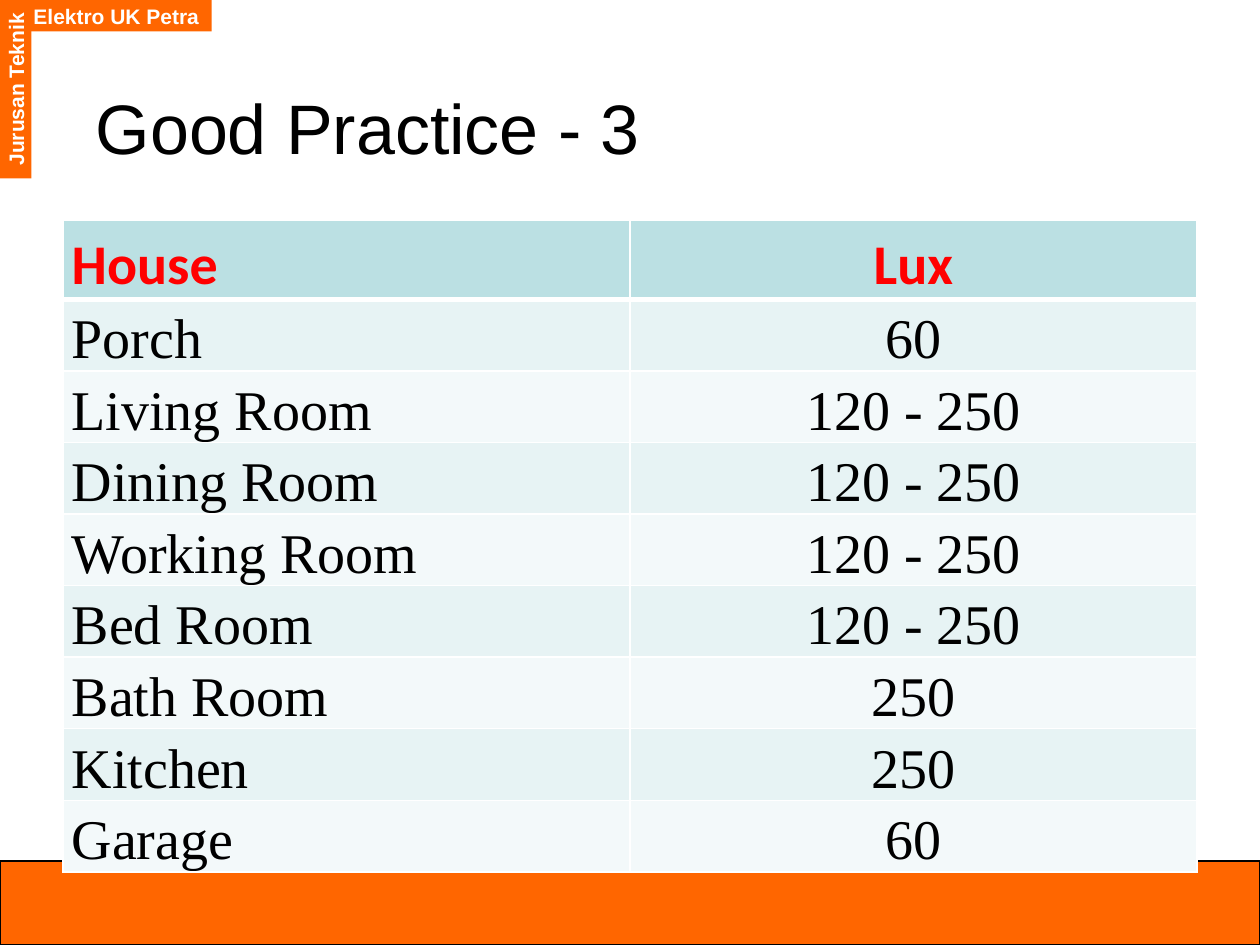
import lxml.etree
import pptx
import pptx.dml.color
import pptx.enum.shapes
import pptx.enum.text
import pptx.oxml.ns
import pptx.util

Pt = pptx.util.Pt
rgb = pptx.dml.color.RGBColor.from_string
align = pptx.enum.text.PP_ALIGN
anchor = pptx.enum.text.MSO_ANCHOR
rect = pptx.enum.shapes.MSO_SHAPE.RECTANGLE
qn = pptx.oxml.ns.qn

theme = {
    "orange": "FF6600", "white": "FFFFFF", "black": "000000", "red": "FF0000",
    "head": "BBE0E3", "bands": ("E7F3F4", "F3F9FA"),
    "label": 12, "title": 40, "cell": 32,
}


def style(font, name, size, color, bold=False):
    looks = {"name": name, "size": Pt(size), "bold": bold}
    for key, value in looks.items():
        setattr(font, key, value)
    font.color.rgb = rgb(color)


def edge(cell, side, width):
    line = lxml.etree.SubElement(
        cell._tc.get_or_add_tcPr(), qn("a:" + side), w=str(Pt(width)))
    fill = lxml.etree.SubElement(line, qn("a:solidFill"))
    lxml.etree.SubElement(fill, qn("a:srgbClr"), val=theme["white"])


deck = pptx.Presentation()
deck.slide_width, deck.slide_height = Pt(720), Pt(540)
slide = deck.slides.add_slide(deck.slide_layouts[5])
shapes = slide.shapes

# Orange footer and corner labels
bars = [
    ("", (0, 492, 720, 48), 0),
    ("Elektro UK Petra", (12, 0, 109, 18), 0),
    ("Jurusan Teknik", (-42, 42, 102, 18), 270),
]
for text, place, turn in bars:
    bar = shapes.add_shape(rect, *map(Pt, place))
    bar.shadow.inherit = False
    bar.rotation = turn
    bar.fill.solid()
    bar.fill.fore_color.rgb = rgb(theme["orange"])
    if not text:
        bar.line.color.rgb = rgb(theme["black"])
        bar.line.width = Pt(0.75)
        continue
    bar.line.fill.background()
    frame = bar.text_frame
    frame.word_wrap = False
    frame.vertical_anchor = anchor.MIDDLE
    par = frame.paragraphs[0]
    par.text = text
    par.alignment = align.CENTER
    style(par.font, "Arial", theme["label"], theme["white"], True)

# Title
title = shapes.title
place = {"left": 47.5, "top": 37.5, "width": 551, "height": 70}
for key, value in place.items():
    setattr(title, key, Pt(value))
frame = title.text_frame
frame.text = "Good Practice - 3"
frame.vertical_anchor = anchor.MIDDLE
par = frame.paragraphs[0]
par.alignment = align.LEFT
style(par.font, "Arial", theme["title"], theme["black"])

# Light levels by room
rows = [
    ("House", "Lux"),
    ("Porch", "60"),
    ("Living Room", "120 - 250"),
    ("Dining Room", "120 - 250"),
    ("Working Room", "120 - 250"),
    ("Bed Room", "120 - 250"),
    ("Bath Room", "250"),
    ("Kitchen", "250"),
    ("Garage", "60"),
]
high, low = 44.5, 40.9
table = shapes.add_table(
    len(rows), 2, Pt(36), Pt(126), Pt(648),
    Pt(high + low * (len(rows) - 1))).table
for col in table.columns:
    col.width = Pt(324)
for r, row in enumerate(rows):
    head = r == 0
    table.rows[r].height = Pt(high if head else low)
    for c, text in enumerate(row):
        cell = table.cell(r, c)
        sides = {"lnL": 1, "lnR": 1, "lnT": 3 if r == 1 else 1,
                 "lnB": 3 if head else 1}
        for side, width in sides.items():
            edge(cell, side, width)
        cell.fill.solid()
        cell.fill.fore_color.rgb = rgb(
            theme["head"] if head else theme["bands"][(r - 1) % 2])
        gaps = {"left": 5, "right": 5, "top": 0, "bottom": 0}
        for side, gap in gaps.items():
            setattr(cell, "margin_" + side, Pt(gap))
        cell.vertical_anchor = anchor.MIDDLE if c else anchor.BOTTOM
        par = cell.text_frame.paragraphs[0]
        par.text = text
        par.alignment = align.CENTER if c else align.LEFT
        par.line_spacing = 1.15
        style(par.font, "Calibri" if head else "Times New Roman",
              theme["cell"], theme["red" if head else "black"], head)

deck.save("out.pptx")
